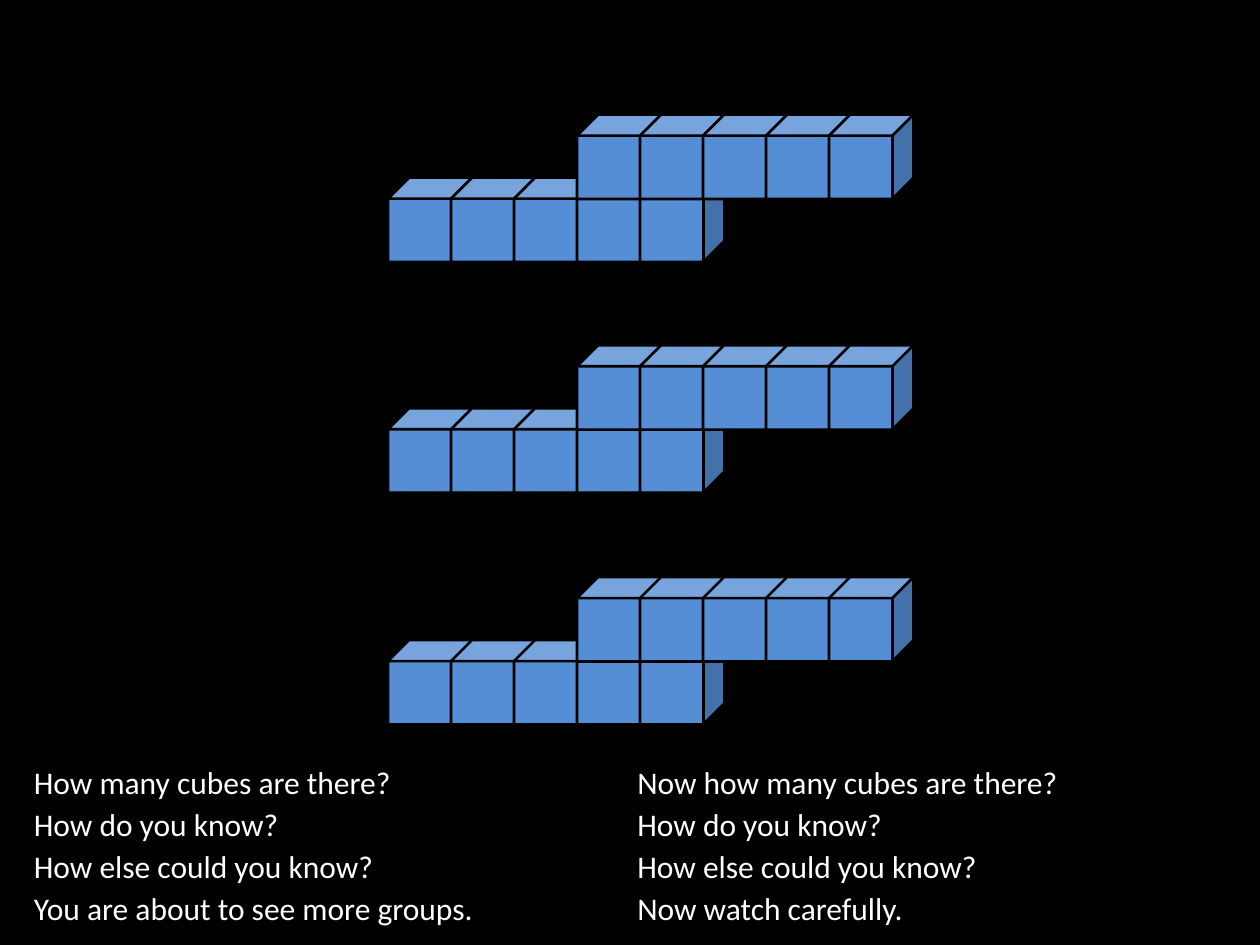
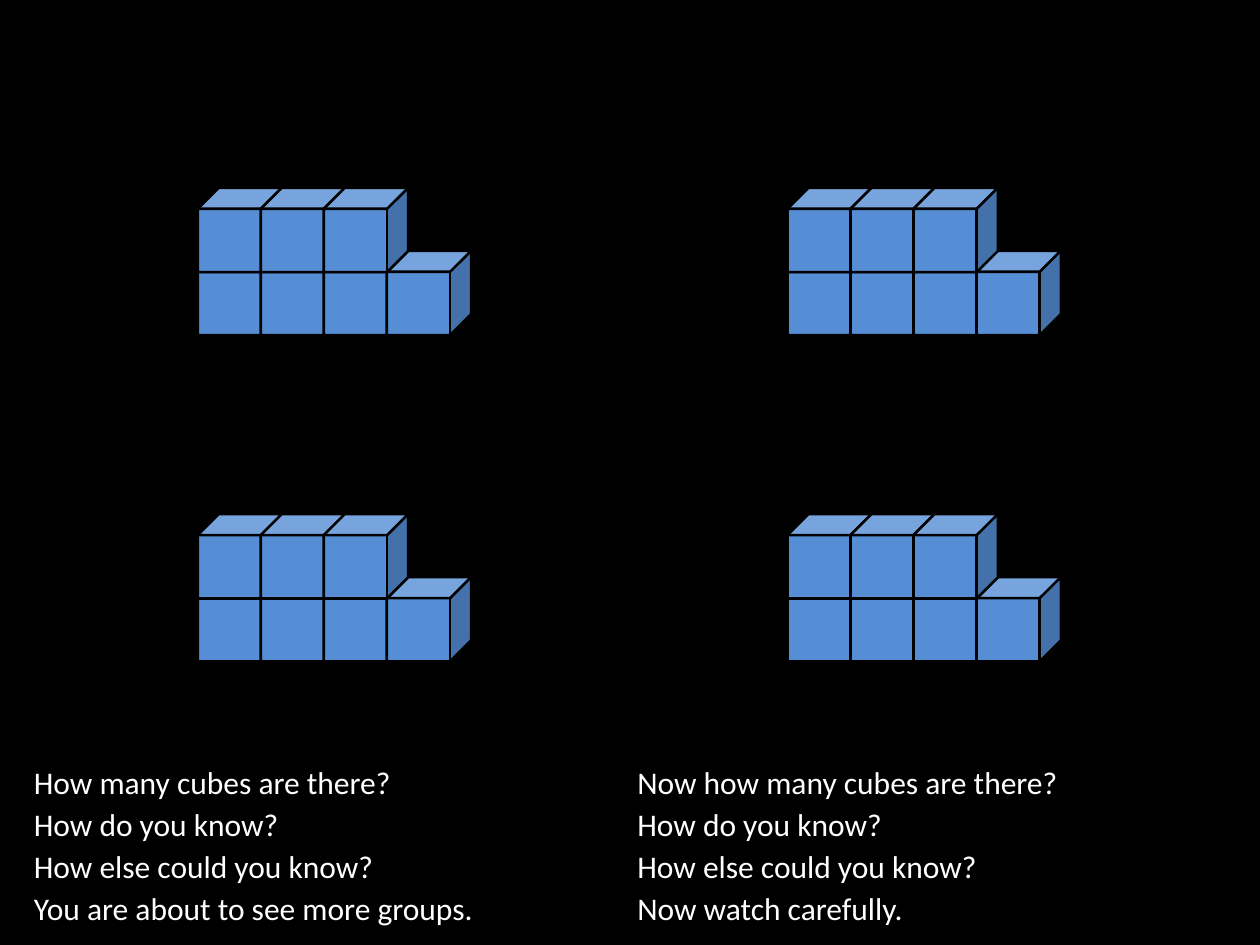
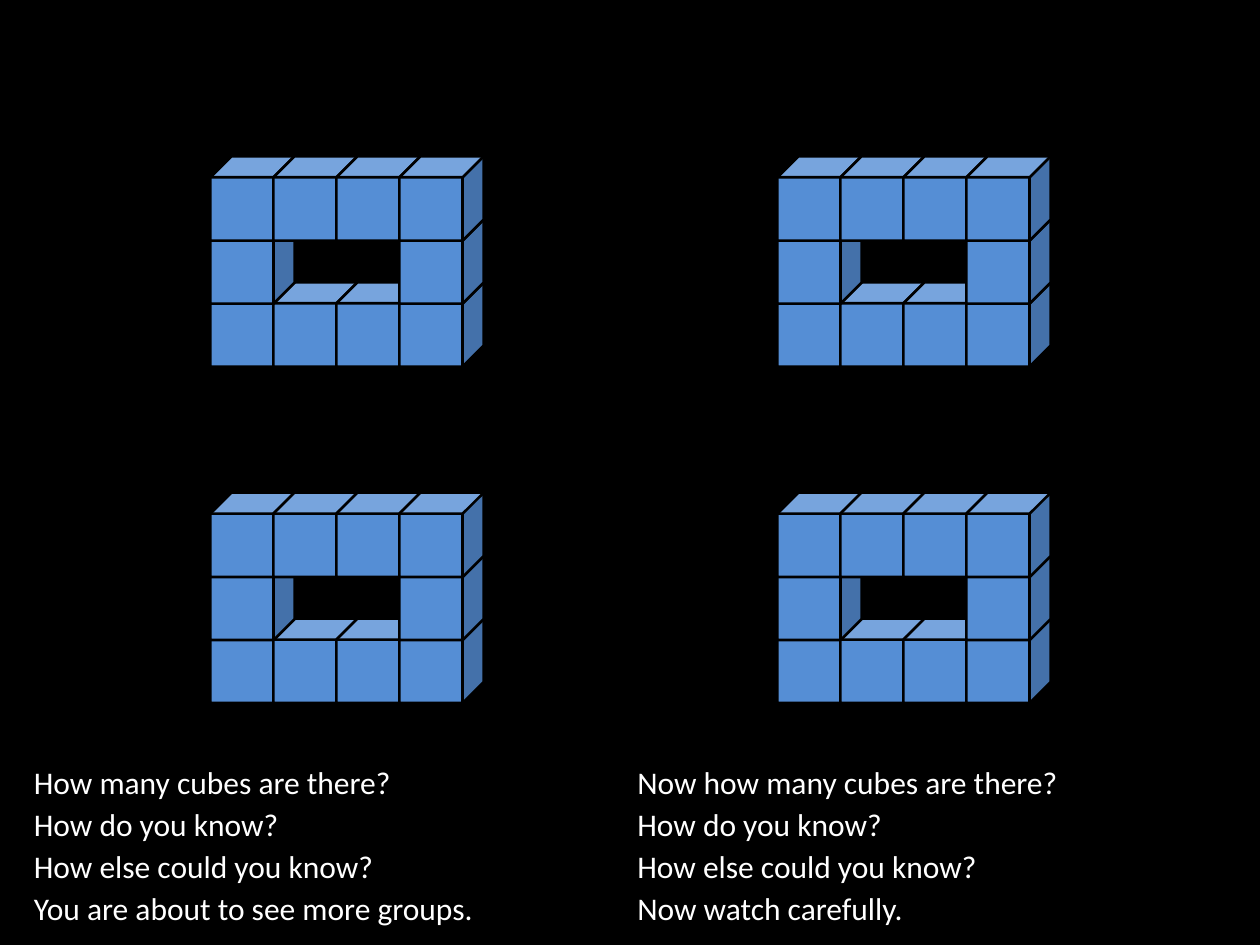
from itertools import product

from pptx import Presentation
from pptx.dml.color import RGBColor
from pptx.enum import shapes, text
from pptx.util import Inches, Pt

BLACK = RGBColor(0x00, 0x00, 0x00)
WHITE = RGBColor(0xFF, 0xFF, 0xFF)
CUBE_BLUE = RGBColor(0x55, 0x8E, 0xD5)
FONT = "Calibri"

CUBE_SIZE = 0.67
CUBE_STEP = 0.5  # width of a cube's front face

QUESTION_TOP = 6.01
QUESTION_PITCH = 1 / 3
QUESTION_HEIGHT = 0.4
# Left edge of each column, then its questions with their widths
QUESTION_COLUMNS = [
    (0.17, [("How many cubes are there?", 3.11),
            ("How do you know?", 2.21),
            ("How else could you know?", 2.98),
            ("You are about to see more groups.", 3.79)]),
    (4.96, [("Now how many cubes are there?", 3.58),
            ("How do you know?", 2.21),
            ("How else could you know?", 2.98),
            ("Now watch carefully.", 2.33)]),
]

# Each pattern lists its rows from top to bottom, "#" being a cube.
# Each slide has a pattern and the lefts and tops of its groups.
STAIR = ["   #####",
         "#####"]
STEP = ["###",
        "####"]
RING = ["####",
        "#  #",
        "####"]
PUZZLES = [
    (STAIR, [3.08], [0.91, 2.74, 4.58]),
    (STEP, [1.57, 6.25], [1.49, 4.08]),
    (RING, [1.67, 6.17], [1.24, 3.91]),
]


def add_cube(group, left, top):
    cube = group.shapes.add_shape(
        shapes.MSO_SHAPE.CUBE, Inches(left), Inches(top),
        Inches(CUBE_SIZE), Inches(CUBE_SIZE))
    cube.shadow.inherit = False
    cube.fill.solid()
    cube.fill.fore_color.rgb = CUBE_BLUE
    cube.line.color.rgb = BLACK
    cube.line.width = Pt(1.5)


def add_cube_group(slide, pattern, left, top):
    """Stack cubes from the bottom row up, so that each hides those behind it."""
    group = slide.shapes.add_group_shape()
    for row, cells in reversed(list(enumerate(pattern))):
        for column, cell in enumerate(cells):
            if cell == "#":
                add_cube(group, left + column * CUBE_STEP, top + row * CUBE_STEP)


def add_question(slide, wording, left, top, width):
    box = slide.shapes.add_textbox(
        Inches(left), Inches(top), Inches(width), Inches(QUESTION_HEIGHT))
    frame = box.text_frame
    frame.word_wrap = False
    frame.auto_size = text.MSO_AUTO_SIZE.SHAPE_TO_FIT_TEXT
    run = frame.paragraphs[0].add_run()
    run.text = wording
    run.font.name = FONT
    run.font.size = Pt(18)
    run.font.color.rgb = WHITE


def add_questions(slide):
    for left, questions in QUESTION_COLUMNS:
        for line, (wording, width) in enumerate(questions):
            top = QUESTION_TOP + line * QUESTION_PITCH
            add_question(slide, wording, left, top, width)


def main():
    prs = Presentation()
    prs.slide_width = Inches(10)
    prs.slide_height = Inches(7.5)
    backdrop = prs.slide_master.background.fill
    backdrop.solid()
    backdrop.fore_color.rgb = BLACK

    blank = prs.slide_layouts.get_by_name("Blank")
    for pattern, lefts, tops in PUZZLES:
        slide = prs.slides.add_slide(blank)
        for top, left in product(tops, lefts):
            add_cube_group(slide, pattern, left, top)
        add_questions(slide)

    prs.save("out.pptx")


if __name__ == "__main__":
    main()
